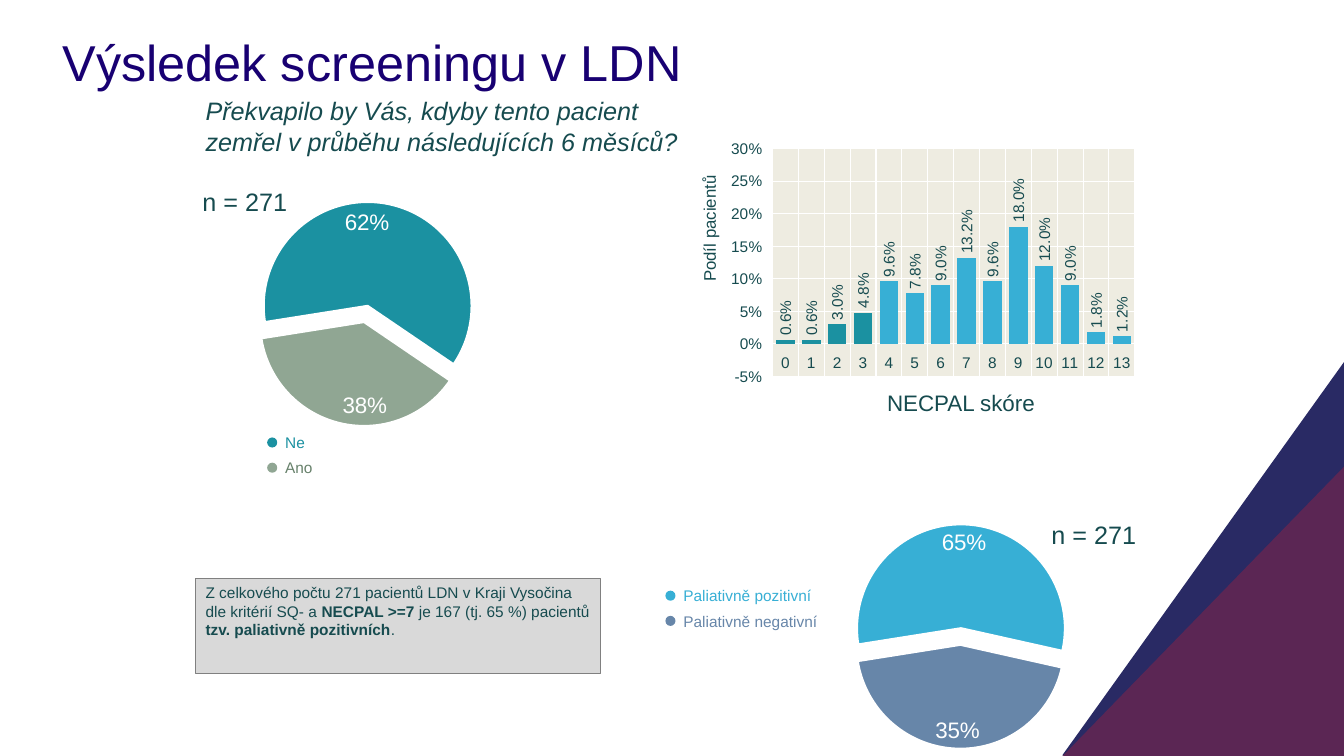
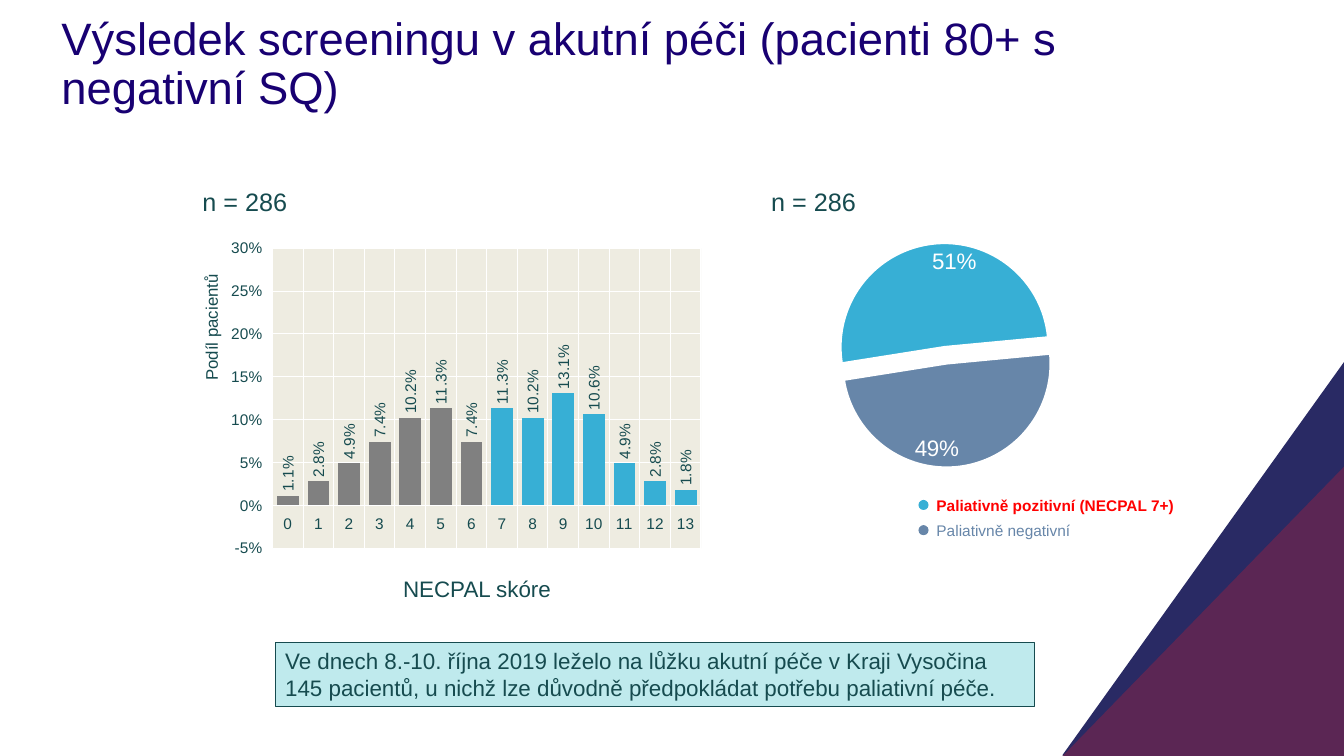
from dataclasses import dataclass
from typing import NamedTuple

from lxml.etree import SubElement
from pptx import Presentation
from pptx.chart.data import CategoryChartData
from pptx.dml.color import RGBColor
from pptx.enum.chart import XL_CHART_TYPE, XL_LABEL_POSITION, XL_TICK_MARK
from pptx.enum.shapes import MSO_SHAPE
from pptx.enum.text import MSO_ANCHOR, MSO_AUTO_SIZE, PP_ALIGN
from pptx.oxml import parse_xml
from pptx.oxml.ns import nsdecls, qn
from pptx.util import Inches, Pt


@dataclass(frozen=True)
class Theme:
    font: str = "Arial"
    title: str = "180072"
    text: str = "164B4F"
    white: str = "FFFFFF"
    navy: str = "292A64"
    plum: str = "5B2654"
    teal: str = "1B91A1"
    sage: str = "90A693"
    dark_sage: str = "67816B"
    sky: str = "37AFD5"
    slate: str = "6786A9"
    gray: str = "808080"
    light_gray: str = "D9D9D9"
    pale_teal: str = "BFEAED"
    plot_fill: str = "EEECE1"
    alert: str = "FF0000"
    title_size: float = 36
    long_title_size: float = 32.4
    lead_size: float = 18
    label_size: float = 16
    axis_title_size: float = 12
    small_size: float = 11


THEME = Theme()
SCORES = [str(score) for score in range(14)]
LEGEND_PITCH = 0.25
DOT_SIZE = 0.1


class Box(NamedTuple):
    left: float
    top: float
    width: float
    height: float

    def lengths(self):
        return [Inches(value) for value in self]


class Run(NamedTuple):
    text: str
    bold: bool = False
    italic: bool = False


# Text and shapes
def style_font(font, size, color=THEME.text, bold=False, italic=False):
    font.name = THEME.font
    font.size = Pt(size)
    font.bold = bold
    font.italic = italic
    font.color.rgb = RGBColor.from_string(color)


def fill_solid(fill, color):
    fill.solid()
    fill.fore_color.rgb = RGBColor.from_string(color)


def draw_line(line, color, width):
    line.color.rgb = RGBColor.from_string(color)
    line.width = Pt(width)


def write_runs(text_frame, runs, size, color=THEME.text):
    text_frame.word_wrap = True
    paragraph = text_frame.paragraphs[0]
    paragraph.alignment = PP_ALIGN.LEFT
    for text, bold, italic in runs:
        run = paragraph.add_run()
        run.text = text
        style_font(run.font, size, color, bold, italic)
    return paragraph


def add_label(slide, box, run, size, color=THEME.text, rotation=0):
    shape = slide.shapes.add_textbox(*box.lengths())
    shape.rotation = rotation
    write_runs(shape.text_frame, [run], size, color)


def add_filled_shape(slide, kind, box, color):
    shape = slide.shapes.add_shape(kind, *box.lengths())
    shape.shadow.inherit = False
    fill_solid(shape.fill, color)
    shape.line.fill.background()
    return shape


def add_note(slide, box, runs, size, fill, outline):
    shape = add_filled_shape(slide, MSO_SHAPE.RECTANGLE, box, fill)
    draw_line(shape.line, outline, 0.75)
    shape.text_frame.vertical_anchor = MSO_ANCHOR.TOP
    write_runs(shape.text_frame, runs, size)


def add_title(slide, box, text, size):
    title = slide.shapes.title
    title.left, title.top, title.width, title.height = box.lengths()
    text_frame = title.text_frame
    text_frame.auto_size = MSO_AUTO_SIZE.NONE
    text_frame.vertical_anchor = MSO_ANCHOR.MIDDLE
    paragraph = write_runs(text_frame, [Run(text)], size, THEME.title)
    paragraph.line_spacing = 0.9


def add_sample_size(slide, left, top, count):
    add_label(slide, Box(left, top, 1.1, 0.4), Run(f"n = {count}"), THEME.lead_size)


def add_legend(slide, left, top, entries):
    """Each entry is a dot colour, a text colour and a run."""
    for row, (dot_color, text_color, run) in enumerate(entries):
        row_top = top + row * LEGEND_PITCH
        add_filled_shape(slide, MSO_SHAPE.OVAL,
                         Box(left, row_top, DOT_SIZE, DOT_SIZE), dot_color)
        add_label(slide, Box(left + 0.08, row_top - 0.09, 3, 0.29), run,
                  THEME.small_size, text_color)


# Corner triangles, kept on the layout that both slides use
def decorate_layout(slide, layout):
    triangles = [(Box(9.98, 4.14, 3.91, 2.8), THEME.navy),
                 (Box(10.5, 4.66, 2.88, 2.8), THEME.plum)]
    for index, (box, color) in enumerate(triangles):
        shape = add_filled_shape(slide, MSO_SHAPE.RIGHT_TRIANGLE, box, color)
        shape.rotation = 270
        shape.element.nvSpPr.cNvPr.set("id", str(20 + index))
        layout.shapes.element.insert(2 + index, shape.element)


# Charts
def set_plot_layout(chart, left, top, width, height):
    plot_area = chart.element.find(".//" + qn("c:plotArea"))
    for old_layout in plot_area.findall(qn("c:layout")):
        plot_area.remove(old_layout)
    layout = parse_xml(f"<c:layout {nsdecls('c')}><c:manualLayout/></c:layout>")
    settings = [("layoutTarget", "inner"), ("xMode", "edge"), ("yMode", "edge"),
                ("x", left), ("y", top), ("w", width), ("h", height)]
    for name, value in settings:
        SubElement(layout[0], qn(f"c:{name}")).set("val", str(value))
    plot_area.insert(0, layout)
    return plot_area


def add_chart(slide, kind, box, categories, values, number_format):
    data = CategoryChartData(number_format=number_format)
    data.categories = categories
    data.add_series("Series 1", values)
    chart = slide.shapes.add_chart(kind, *box.lengths(), data).chart
    chart.has_title = False
    chart.has_legend = False
    style_font(chart.font, THEME.lead_size)
    return chart


def add_pie(slide, left, top, values, colors, custom_labels=()):
    chart = add_chart(slide, XL_CHART_TYPE.PIE, Box(left, top, 2.75, 2.46),
                      ["1", "2"], values, "General")
    set_plot_layout(chart, 0.06, 0.07, 0.81, 0.93)
    plot = chart.plots[0]
    plot.vary_by_categories = True
    series = plot.series[0]
    for index, color in enumerate(colors):
        point_format = series.points[index].format
        fill_solid(point_format.fill, color)
        draw_line(point_format.line, THEME.white, 1.5)

    labels = series.data_labels
    labels.show_percentage = True
    labels.show_value = False
    labels.number_format = "0%"
    labels.number_format_is_linked = False
    labels.position = XL_LABEL_POSITION.INSIDE_END
    style_font(labels.font, THEME.label_size, THEME.white)
    for index, text in enumerate(custom_labels):
        label = series.points[index].data_label
        run = label.text_frame.paragraphs[0].add_run()
        run.text = text
        style_font(run.font, THEME.label_size, THEME.white)
        label.position = XL_LABEL_POSITION.INSIDE_END

    # Slice separation and starting angle
    explosion = parse_xml(f'<c:explosion {nsdecls("c")} val="8"/>')
    series._element.find(qn("c:dPt")).addprevious(explosion)
    SubElement(plot._element, qn("c:firstSliceAng")).set("val", "261")


def style_axis(axis):
    axis.major_tick_mark = XL_TICK_MARK.OUTSIDE
    axis.minor_tick_mark = XL_TICK_MARK.NONE
    axis.format.line.fill.background()
    axis.has_major_gridlines = True
    draw_line(axis.major_gridlines.format.line, THEME.white, 0.75)
    style_font(axis.tick_labels.font, THEME.small_size)


def add_score_chart(slide, box, values, split, low_color, caption_offset):
    """Columns from the score `split` upwards are sky blue."""
    chart = add_chart(slide, XL_CHART_TYPE.COLUMN_CLUSTERED, box, SCORES, values, "0.0%")
    plot_area = set_plot_layout(
        chart, round(0.5 / box.width, 2), round(0.15 / box.height, 2),
        round(1 - 0.59 / box.width, 2), round(1 - 0.3 / box.height, 2))
    plot_area.append(parse_xml(
        f'<c:spPr {nsdecls("c", "a")}><a:solidFill>'
        f'<a:srgbClr val="{THEME.plot_fill}"/></a:solidFill></c:spPr>'))
    style_axis(chart.category_axis)
    value_axis = chart.value_axis
    style_axis(value_axis)
    value_axis.minimum_scale = -0.05
    value_axis.maximum_scale = 0.3
    value_axis.major_unit = 0.05
    value_axis.tick_labels.number_format = "0%"
    value_axis.tick_labels.number_format_is_linked = False

    plot = chart.plots[0]
    plot.gap_width = 40
    plot.vary_by_categories = False
    series = plot.series[0]
    series.invert_if_negative = False
    fill_solid(series.format.fill, THEME.sky)
    for index in range(split):
        fill_solid(series.points[index].format.fill, low_color)

    labels = series.data_labels
    labels.show_value = True
    labels.number_format = "0.0%"
    labels.number_format_is_linked = False
    labels.position = XL_LABEL_POSITION.OUTSIDE_END
    style_font(labels.font, THEME.small_size)
    body = labels._element.find(qn("c:txPr")).find(qn("a:bodyPr"))
    body.set("rot", "-5400000")
    body.set("vert", "horz")

    # Axis captions
    add_label(slide, Box(box.left - 1.7, box.top - 0.15, 3.15, 0.3),
              Run("Podíl pacientů"), THEME.axis_title_size, rotation=270)
    across, down = caption_offset
    add_label(slide, Box(box.left + across, box.top + down, 3.15, 0.37),
              Run("NECPAL skóre"), THEME.label_size)


# Slides
def build_long_term_care(slide):
    add_title(slide, Box(0.52, 0.29, 10.53, 0.71), "Výsledek screeningu v LDN",
              THEME.title_size)
    add_label(slide, Box(1.94, 0.9, 5, 0.71),
              Run("Překvapilo by Vás, kdyby tento pacient zemřel v průběhu "
                  "následujících 6 měsíců?", italic=True), THEME.lead_size)
    add_pie(slide, 2.35, 1.8, [62, 38], [THEME.teal, THEME.sage])
    add_legend(slide, 2.65, 4.34, [(THEME.teal, THEME.teal, Run("Ne")),
                                   (THEME.sage, THEME.dark_sage, Run("Ano"))])
    add_sample_size(slide, 1.91, 1.8, 271)
    add_note(slide, Box(1.94, 5.74, 4.02, 0.94), [
        Run("Z celkového počtu 271 pacientů LDN v Kraji Vysočina dle kritérií SQ- a "),
        Run("NECPAL >=7 ", bold=True),
        Run("je 167 (tj. 65 %) pacientů "),
        Run("tzv. paliativně pozitivních", bold=True),
        Run("."),
    ], THEME.small_size, THEME.light_gray, THEME.gray)
    add_score_chart(slide, Box(7.16, 1.32, 4.18, 2.57),
                    [0.006, 0.006, 0.03, 0.048, 0.096, 0.078, 0.09, 0.132, 0.096,
                     0.18, 0.12, 0.09, 0.018, 0.012], 4, THEME.teal, (1.54, 2.49))
    add_pie(slide, 8.25, 5, [56, 44], [THEME.sky, THEME.slate], ["65%", "35%"])
    add_sample_size(slide, 10.33, 5.1, 271)
    add_legend(slide, 6.6, 5.86, [
        (THEME.sky, THEME.sky, Run("Paliativně pozitivní")),
        (THEME.slate, THEME.slate, Run("Paliativně negativní"))])


def build_acute_care(slide):
    add_title(slide, Box(0.51, 0.29, 11.13, 0.71),
              "Výsledek screeningu v akutní péči (pacienti 80+ s negativní SQ)",
              THEME.long_title_size)
    add_score_chart(slide, Box(2.22, 2.3, 4.83, 3.27),
                    [0.011, 0.028, 0.049, 0.074, 0.102, 0.113, 0.074, 0.113, 0.102,
                     0.131, 0.106, 0.049, 0.028, 0.018], 7, THEME.gray, (1.68, 3.36))
    for left in (1.91, 7.55):
        add_sample_size(slide, left, 1.8, 286)
    add_pie(slide, 8.1, 2.21, [51, 49], [THEME.sky, THEME.slate])
    add_legend(slide, 9.11, 4.96, [
        (THEME.sky, THEME.alert, Run("Paliativně pozitivní (NECPAL 7+)", bold=True)),
        (THEME.slate, THEME.slate, Run("Paliativně negativní"))])
    add_note(slide, Box(2.73, 6.37, 7.53, 0.64), [
        Run("Ve dnech 8.-10. října 2019 leželo na lůžku akutní péče v Kraji Vysočina "
            "145 pacientů, u nichž lze důvodně předpokládat potřebu paliativní péče."),
    ], THEME.label_size, THEME.pale_teal, THEME.text)


def main():
    presentation = Presentation()
    presentation.slide_width = Inches(13.33)
    presentation.slide_height = Inches(7.5)
    layout = presentation.slide_layouts.get_by_name("Title Only")
    slides = [presentation.slides.add_slide(layout) for _ in range(2)]
    decorate_layout(slides[0], layout)
    build_long_term_care(slides[0])
    build_acute_care(slides[1])
    presentation.save("out.pptx")


if __name__ == "__main__":
    main()
